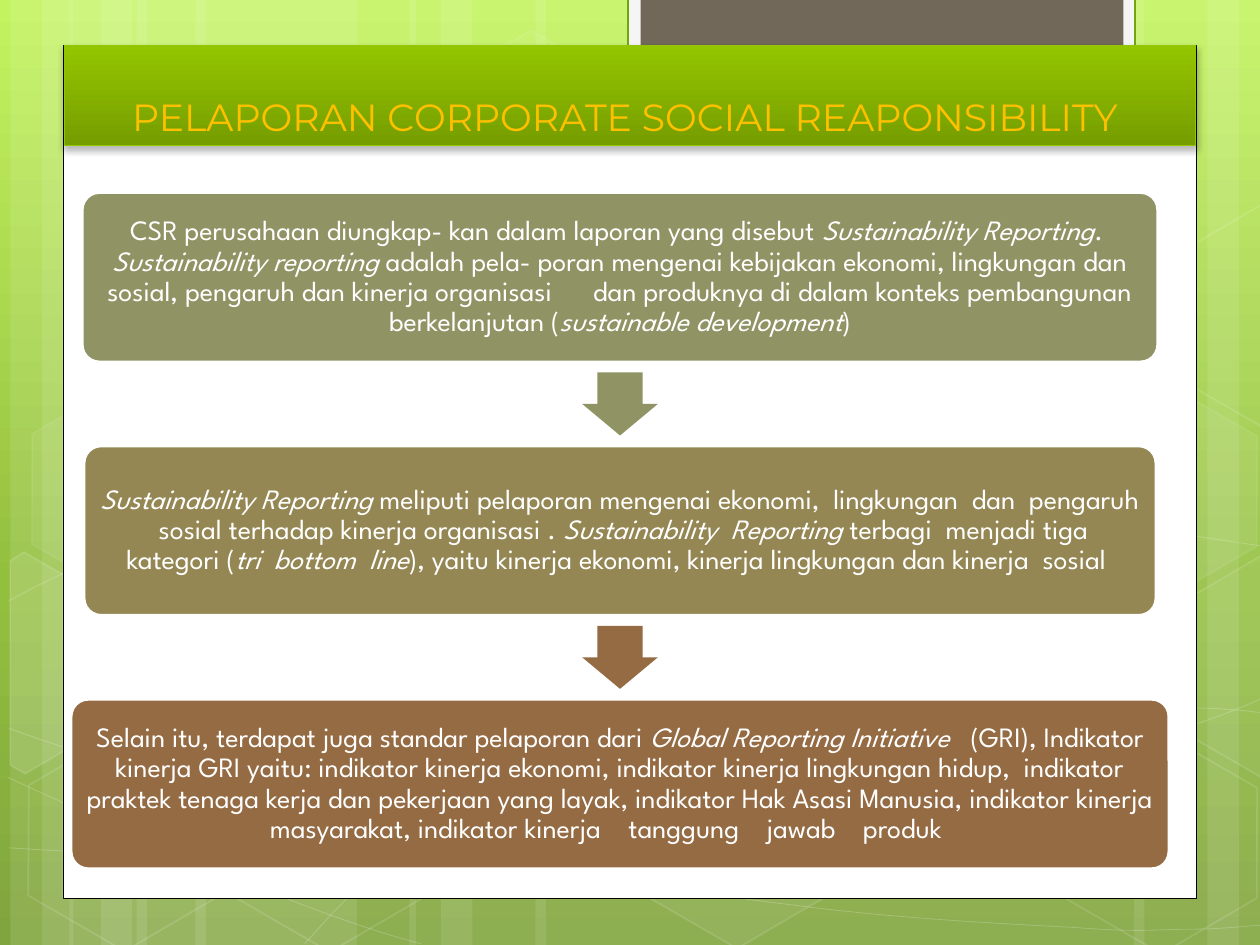
from dataclasses import dataclass
from math import cos, radians, sin

from lxml.etree import SubElement
from pptx import Presentation
from pptx.dml.color import RGBColor
from pptx.enum.shapes import MSO_SHAPE as Preset
from pptx.enum.text import MSO_ANCHOR as Anchor, PP_ALIGN as Align
from pptx.oxml.ns import qn
from pptx.util import Pt

@dataclass(frozen=True)
class Theme:
    background: tuple = ((0, "C3F35F"), (62, "93BF3F"), (100, "81A53E"))
    banner: tuple = ((0, "94C600"), (100, "769D00"))
    banner_line: str = "94C600"
    white: str = "FFFFFF"
    black: str = "000000"
    tab: str = "71685A"
    tab_edge: str = "F5F5F5"
    tab_line: str = "74A510"
    title: str = "FFC000"
    title_font: str = "Montserrat"
    title_size: float = 21.6
    body_font: str = "League Spartan"
    body_size: float = 16

THEME = Theme()
TILT = 30

BANDS = [(78, 126), (6, 36), (24, 60), (111.6, 126), (39.6, 36), (57.6, 60),
         (528, 126), (690, 36), (648, 60), (306, 222), (234, 36), (252, 60)]

# Each curve: a start point, then Bezier segments (two controls and an end) or line ends.
CURVES = [
    ((5, 484.5), [(44, 487, 83, 489, 137, 488), (191, 487, 258, 486, 330, 479),
                  (402, 471, 504, 458, 570, 444), (636, 431, 703, 409, 725, 397)]),
    ((5, 343.4), [(26, 332, 47, 321, 87, 310), (128, 299, 186, 284, 250, 279),
                  (314, 274, 392, 273, 471, 279), (550, 284, 682, 307, 725, 312.5)]),
    ((4.3, 444.2), [(91.4, 484, 178, 523, 240.5, 539.3)]),
    ((5, 416.2), [(27, 424, 50, 432, 92, 444), (134, 454, 197, 472, 257, 485),
                  (317, 497, 392, 510, 452, 517), (512, 525, 576, 528, 614, 530),
                  (652, 533, 662, 531, 680, 531), (699, 531, 712, 529, 725, 528.5)]),
    ((174.2, 539.3), [(187, 525, 200, 510, 217, 498), (235, 485, 259, 470, 279, 460),
                      (300, 450, 312, 446, 338, 438), (364, 431, 413, 421, 438, 416),
                      (464, 411, 467, 411, 490, 410), (512, 407.5, 547, 405, 572, 404.6),
                      (597, 404, 638, 404.6, 638, 404.6), (686, 404.6),
                      (699, 405, 711, 406, 718, 407), (725, 407.5, 722, 407, 724.3, 407.5)]),
]

# Left, top, fill opacity, line opacity (percent)
HEXAGONS = [(240.5, 26, 4, 8), (358, 424, 6, 12), (8, 425.5, 0, 12), (10, 224.6, 7, 8),
            (125.3, 426, 0, 12), (542, 326, 10, 12), (600.5, 427, 0, 12), (600.5, 226, 7, 8)]
LEFT_CUT = [(5.8, 320.4), (13.7, 315.4), (69, 347), (68.4, 410.4), (14.4, 442), (5.8, 437)]
RIGHT_CUT = [(666.7, 349.2), (720.7, 317.5), (726.5, 321), (726.5, 441.4), (721.4, 444.2), (666.7, 412.6)]
UPPER_CUT = [(x, y - 200.5) for x, y in RIGHT_CUT]
# Points, centre of rotation, fill opacity
CUT_HEXAGONS = [(LEFT_CUT, (25.9, 385.2), 10), (RIGHT_CUT, (709.2, 374.4), 4),
                (UPPER_CUT, (709.2, 173.9), 0)]

TITLE = "PELAPORAN CORPORATE SOCIAL REAPONSIBILITY "

# Width, box colour, colour of the arrow below, text with *italic* parts
STEPS = [
    (614.2, "909465", "909465",
     "CSR perusahaan diungkap- kan dalam laporan yang disebut *Sustainability Reporting*.  "
     "*Sustainability reporting *adalah pela- poran mengenai kebijakan ekonomi, lingkungan dan sosial, "
     "pengaruh dan kinerja organisasi      dan produknya di dalam konteks pembangunan "
     "berkelanjutan (*sustainable development*)"),
    (612.2, "958753", "956B43",
     "*Sustainability Reporting *meliputi pelaporan mengenai ekonomi,  lingkungan  dan  pengaruh   "
     "sosial terhadap kinerja organisasi . *Sustainability  Reporting *terbagi  menjadi tiga  "
     "kategori (*tri  bottom  line*), yaitu kinerja ekonomi, kinerja lingkungan dan kinerja  sosial "),
    (627, "956B43", None,
     "Selain itu, terdapat juga standar pelaporan dari *Global Reporting Initiative   *(GRI), Indikator "
     "kinerja GRI yaitu: indikator kinerja ekonomi, indikator kinerja lingkungan hidup,  indikator "
     "praktek tenaga kerja dan pekerjaan yang layak, indikator Hak Asasi Manusia, indikator kinerja "
     "masyarakat, indikator kinerja    tanggung    jawab    produk    "),
]

def set_color(fill, color, opacity=100):
    """Fill with a solid colour; zero opacity means no fill."""
    if not opacity:
        fill.background()
        return
    fill.solid()
    fill.fore_color.rgb = RGBColor.from_string(color)
    if opacity < 100:
        SubElement(fill._xPr.find(".//" + qn("a:srgbClr")), qn("a:alpha"), val=str(opacity * 1000))

def set_gradient(fill, stops):
    """Run the stops from top to bottom."""
    fill.gradient()
    gradient = fill._xPr.find(qn("a:gradFill"))
    for child in list(gradient):
        gradient.remove(child)
    stop_list = SubElement(gradient, qn("a:gsLst"))
    for position, color in stops:
        stop = SubElement(stop_list, qn("a:gs"), pos=str(position * 1000))
        SubElement(stop, qn("a:srgbClr"), val=color)
    SubElement(gradient, qn("a:lin"), ang="5400000", scaled="0")

def set_style(shape, fill, opacity=100, line=None, width=1, line_opacity=100):
    shape.shadow.inherit = False
    set_color(shape.fill, fill, opacity)
    set_color(shape.line.fill, line, line_opacity if line else 0)
    if line:
        shape.line.width = Pt(width)

def add_preset(slide, preset, box, *style, **options):
    shape = slide.shapes.add_shape(preset, *map(Pt, box))
    set_style(shape, *style, **options)
    return shape

def add_outline(slide, points, closed, *style):
    start, *rest = [(Pt(x), Pt(y)) for x, y in points]
    builder = slide.shapes.build_freeform(*start)
    builder.add_line_segments(rest, close=closed)
    shape = builder.convert_to_shape()
    set_style(shape, *style)
    return shape

def add_curve(slide, start, segments):
    ends = [segment[-2:] for segment in segments]
    shape = add_outline(slide, [start, *ends], False, THEME.white, 0, THEME.white, 0.5, 20)
    for line, segment in zip(shape.element.findall(".//" + qn("a:lnTo")), segments):
        if len(segment) == 6:
            line.tag = qn("a:cubicBezTo")
            for index in (0, 1):
                x, y = segment[2 * index:2 * index + 2]
                control = {"x": str(Pt(x) - shape.left), "y": str(Pt(y) - shape.top)}
                line.insert(index, line.makeelement(qn("a:pt"), control))

def turn_back(points, center):
    """Undo the tilt of the points around the centre."""
    c, s = cos(radians(TILT)), sin(radians(TILT))
    offsets = [(x - center[0], y - center[1]) for x, y in points]
    return [(center[0] + x * c + y * s, center[1] - x * s + y * c) for x, y in offsets]

def add_backdrop(slide, height):
    white = THEME.white
    set_gradient(slide.background.fill, THEME.background)
    for left, width in BANDS:
        add_preset(slide, Preset.RECTANGLE, (left, 0, width, height), white, 10)
    for start, segments in CURVES:
        add_curve(slide, start, segments)
    for left, top, opacity, line_opacity in HEXAGONS:
        hexagon = add_preset(slide, Preset.HEXAGON, (left, top, 126, 109.5),
                             white, opacity, white, 1, line_opacity)
        hexagon.adjustments[0] = 0.285
        hexagon.rotation = TILT
    for points, center, opacity in CUT_HEXAGONS:
        add_outline(slide, turn_back(points, center), True, white, opacity, white, 1, 12).rotation = TILT

def add_card(slide, box):
    add_preset(slide, Preset.RECTANGLE, box, THEME.white, line=THEME.black, width=0.5)
    add_preset(slide, Preset.RECTANGLE, (359, -1.4, 289.7, 54.7), THEME.tab_edge, line=THEME.tab_line, width=1.25)
    add_preset(slide, Preset.RECTANGLE, (366, -1.4, 276, 49), THEME.tab)

def add_run(paragraph, text, font, size, color, italic=False):
    run = paragraph.add_run()
    run.text = text
    run.font.name, run.font.size, run.font.italic = font, Pt(size), italic
    run.font.color.rgb = RGBColor.from_string(color)

def place_title(slide, box):
    title = slide.shapes.title
    slide.shapes._spTree.append(title.element)  # in front of the card
    title.left, title.top, title.width, title.height = map(Pt, box)
    set_gradient(title.fill, THEME.banner)
    set_color(title.line.fill, THEME.banner_line)
    title.line.width = Pt(0.75)
    effects = SubElement(title.element.spPr, qn("a:effectLst"))
    shadow = SubElement(effects, qn("a:outerShdw"), blurRad=str(Pt(4)), dist=str(Pt(2)), dir="5400000")
    SubElement(SubElement(shadow, qn("a:srgbClr"), val=THEME.black), qn("a:alpha"), val="28000")
    title.text_frame.vertical_anchor = Anchor.BOTTOM
    paragraph = title.text_frame.paragraphs[0]
    paragraph.alignment = Align.CENTER
    add_run(paragraph, TITLE, THEME.title_font, THEME.title_size, THEME.title)

def add_step(slide, box, color, text):
    shape = add_preset(slide, Preset.ROUNDED_RECTANGLE, box, color, line=THEME.white, width=1.25)
    shape.adjustments[0] = 0.1
    frame = shape.text_frame
    frame.word_wrap, frame.vertical_anchor = True, Anchor.MIDDLE
    frame.margin_left = frame.margin_right = frame.margin_top = frame.margin_bottom = Pt(4.8)
    paragraph = frame.paragraphs[0]
    paragraph.alignment, paragraph.line_spacing = Align.CENTER, 0.9
    for index, part in enumerate(text.split("*")):
        if part:
            add_run(paragraph, part, THEME.body_font, THEME.body_size, THEME.white, index % 2 == 1)

def add_flow(slide, center, top, height, gap):
    """Stack the steps around a centre line, with an arrow in each gap."""
    length, breadth = 36, 43.2
    for index, (width, color, arrow_color, text) in enumerate(STEPS):
        y = top + index * (height + gap)
        add_step(slide, (center - width / 2, y, width, height), color, text)
        if arrow_color:
            box = (center - length / 2, y + height + (gap - breadth) / 2, length, breadth)
            arrow = add_preset(slide, Preset.RIGHT_ARROW, box, arrow_color)
            arrow.rotation = 90
            arrow.adjustments[0], arrow.adjustments[1] = 0.6, 0.5

presentation = Presentation()
presentation.slide_width, presentation.slide_height = Pt(720), Pt(540)
slide = presentation.slides.add_slide(presentation.slide_layouts[5])
add_backdrop(slide, 540)
add_card(slide, (36, 26, 648, 487.2))
place_title(slide, (36.7, 26, 646.6, 57))
add_flow(slide, center=354.3, top=110.2, height=96.5, gap=48.3)
presentation.save("out.pptx")
